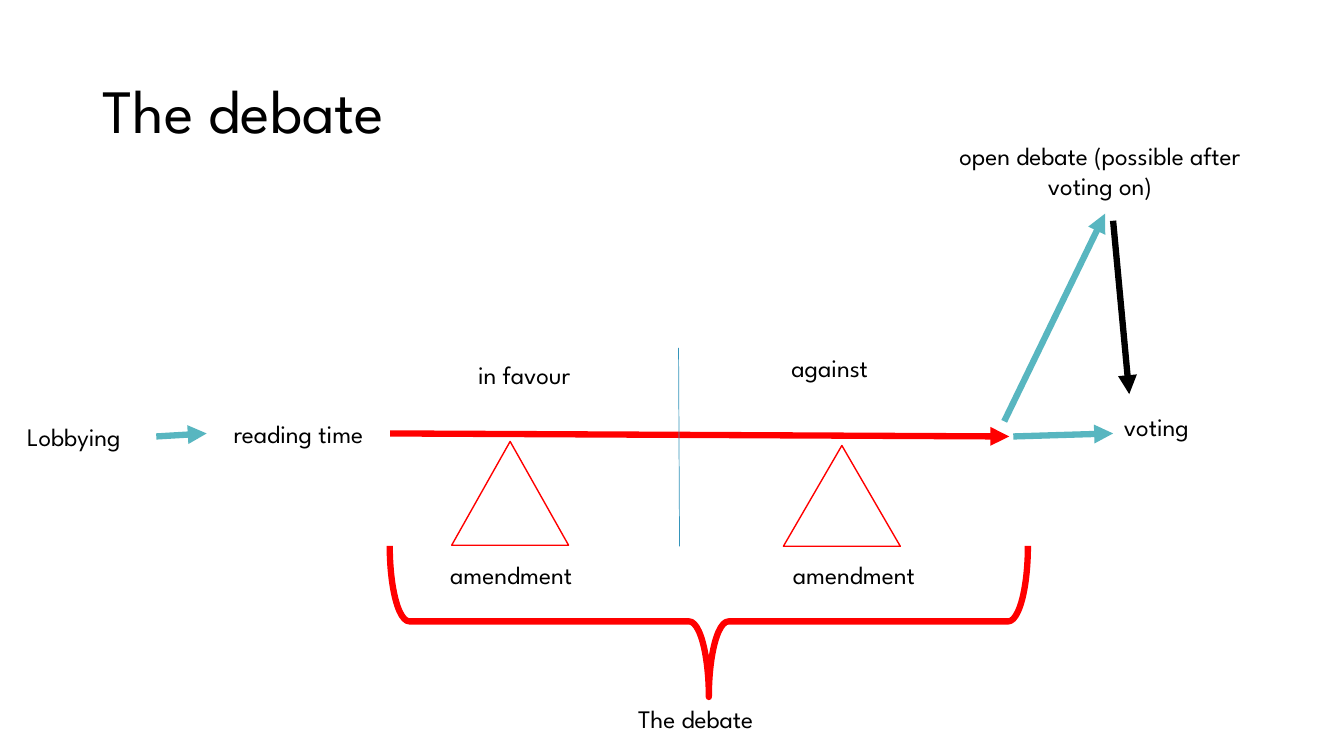
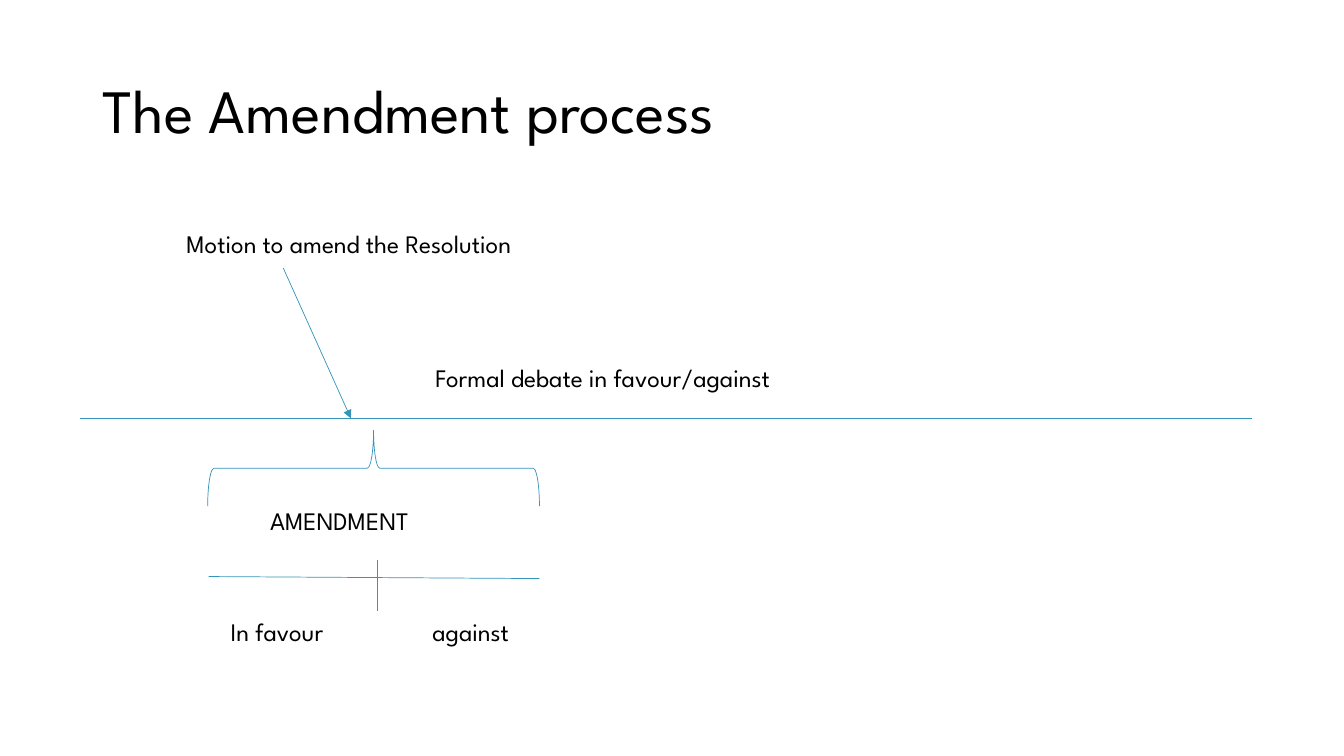
import lxml.etree
import pptx
import pptx.dml.color
import pptx.enum.shapes
import pptx.enum.text
import pptx.oxml
import pptx.oxml.ns
import pptx.util

SHAPES = pptx.enum.shapes.MSO_SHAPE
ALIGN = pptx.enum.text.PP_ALIGN
ANCHOR = pptx.enum.text.MSO_ANCHOR
FIT = pptx.enum.text.MSO_AUTO_SIZE


def px(length):
    return pptx.util.Emu(length * 9144)


def color(value):
    return pptx.dml.color.RGBColor.from_string(value)


def apply(target, values):
    for name, value in values.items():
        setattr(target, name, value)


class Diagram:
    INK = "000000"
    RED = "FF0000"
    TEAL = "58B6C0"
    BLUE = "3494BA"
    FONT = "League Spartan"
    THIN, OUTLINE, THICK = 0.5, 1, 4.5

    def __init__(self, deck):
        self.deck = deck
        self.slide = None

    def new_slide(self, title):
        self.slide = self.deck.slides.add_slide(self.deck.slide_layouts[6])
        frame = {"vertical_anchor": ANCHOR.MIDDLE, "auto_size": FIT.NONE}
        self.text(title, 92, 40, 1150, 145, 44, frame, {"line_spacing": 0.9})

    def text(self, words, left, top, width, height, size, frame, layout, tab=None):
        box = self.slide.shapes.add_textbox(px(left), px(top), px(width), px(height))
        apply(box.text_frame, {"word_wrap": True, **frame})
        para = box.text_frame.paragraphs[0]
        if tab:
            stops = pptx.oxml.ns.qn("a:tabLst"), pptx.oxml.ns.qn("a:tab")
            tabs = lxml.etree.SubElement(para._p.get_or_add_pPr(), stops[0])
            lxml.etree.SubElement(tabs, stops[1], pos=str(px(tab)), algn="l")
        apply(para, layout)
        span = para.add_run()
        span.text = words
        apply(span.font, {"name": self.FONT, "size": pptx.util.Pt(size)})
        span.font.color.rgb = color(self.INK)

    def label(self, words, left, top, width, height=40, align=ALIGN.CENTER, tab=None):
        frame = {"auto_size": FIT.SHAPE_TO_FIT_TEXT}
        self.text(words, left, top, width, height, 18, frame, {"alignment": align}, tab)

    def stroke(self, line, ink, weight):
        line.color.rgb = color(ink)
        line.width = pptx.util.Pt(weight)

    def line(self, start, end, ink, weight, arrow=False):
        straight = pptx.enum.shapes.MSO_CONNECTOR.STRAIGHT
        points = [px(value) for value in (*start, *end)]
        connector = self.slide.shapes.add_connector(straight, *points)
        self.stroke(connector.line, ink, weight)
        if arrow:
            outline = connector.line._get_or_add_ln()
            lxml.etree.SubElement(outline, pptx.oxml.ns.qn("a:tailEnd"), type="triangle")
        properties = connector._element.spPr
        lxml.etree.SubElement(properties, pptx.oxml.ns.qn("a:effectLst"))

    def outline(self, kind, left, top, width, height, ink, weight, rotation=0, bend=None):
        shape = self.slide.shapes.add_shape(kind, px(left), px(top), px(width), px(height))
        shape.shadow.inherit = False
        shape.rotation = rotation
        shape.fill.background()
        self.stroke(shape.line, ink, weight)
        if bend:
            shape.adjustments[0] = bend


def build_debate(diagram):
    red, teal, thick = diagram.RED, diagram.TEAL, diagram.THICK
    diagram.new_slide("The debate")
    diagram.line((387, 430), (1001, 433), red, thick, arrow=True)
    diagram.line((673, 345), (674, 542), diagram.BLUE, diagram.THIN)
    for words, left, top, width in (
        ("in favour", 370, 352, 300),
        ("against", 673, 345, 300),
        ("voting", 997, 403, 300),
        ("reading time", 148, 410, 296),
        ("amendment", 357, 550, 300),
        ("amendment", 697, 550, 300),
    ):
        diagram.label(words, left, top, width)
    diagram.label("open debate (possible after voting on)", 941, 134, 300, 71)
    for left, top, height in ((448, 438, 103), (777, 442, 100)):
        diagram.outline(SHAPES.ISOSCELES_TRIANGLE, left, top, 116, height, red, diagram.OUTLINE)
    for start, end, ink in (
        ((996, 418), (1096, 212), teal),
        ((1104, 219), (1120, 391), diagram.INK),
        ((1005, 433), (1104, 430), teal),
        ((155, 433), (205, 430), teal),
    ):
        diagram.line(start, end, ink, thick, arrow=True)
    diagram.label("Lobbying", 17, 413, 141, align=ALIGN.LEFT)
    diagram.outline(SHAPES.RIGHT_BRACE, 628, 300, 150, 633, red, thick, 90, 0.13)
    diagram.label("The debate", 623, 693, 337, align=ALIGN.LEFT)


def build_amendment(diagram):
    blue, thin = diagram.BLUE, diagram.THIN
    diagram.new_slide("The Amendment process")
    for start, end, arrow in (
        ((79, 415), (1242, 415), False),
        ((281, 266), (348, 415), True),
        ((207, 572), (535, 574), False),
        ((374, 556), (374, 606), False),
    ):
        diagram.line(start, end, blue, thin, arrow)
    diagram.outline(SHAPES.LEFT_BRACE, 333, 300, 75, 329, blue, thin, 90)
    for words, left, top, width, tab in (
        ("Formal debate in favour/against", 422, 355, 417, None),
        ("Motion to amend the Resolution", 175, 222, 415, None),
        ("AMENDMENT", 258, 496, 179, None),
        ("In favour\tagainst", 219, 607, 413, 200),
    ):
        diagram.label(words, left, top, width, align=ALIGN.LEFT, tab=tab)


def main():
    deck = pptx.Presentation()
    apply(deck, {"slide_width": px(1333), "slide_height": px(750)})
    diagram = Diagram(deck)
    build_debate(diagram)
    build_amendment(diagram)
    deck.save("out.pptx")


if __name__ == "__main__":
    main()
